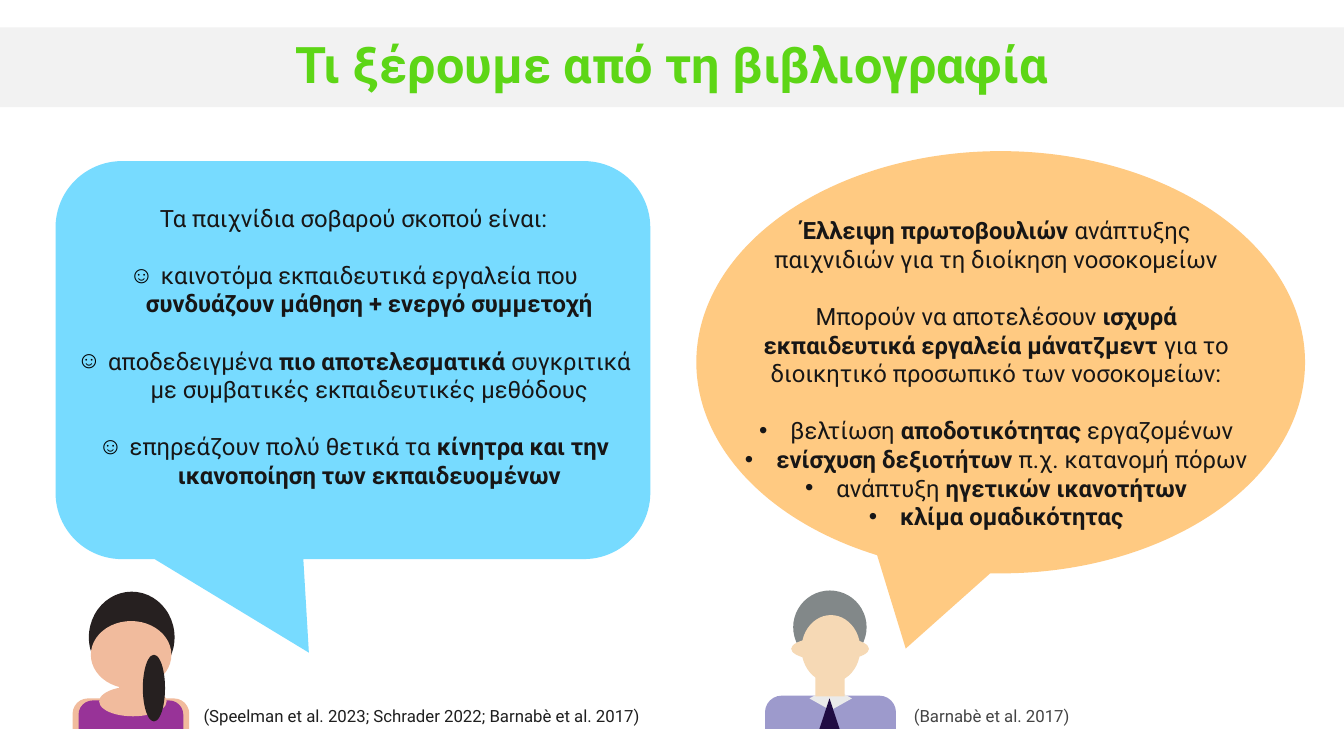
"""Build the slide on what the literature says about serious games."""
from lxml.etree import SubElement
from pptx import Presentation
from pptx.dml.color import RGBColor
from pptx.enum.shapes import MSO_SHAPE as Preset
from pptx.enum.text import MSO_ANCHOR as Anchor, MSO_AUTO_SIZE as AutoSize, PP_ALIGN as Align
from pptx.oxml.ns import qn
from pptx.util import Cm, Pt

FONT = "Roboto"
GREEN = RGBColor(0x5D, 0xD6, 0x16)
BAND = RGBColor(0xF2, 0xF2, 0xF2)
BLUE = RGBColor(0x37, 0xCA, 0xFF)
ORANGE = RGBColor(0xFF, 0xB1, 0x48)
INK = RGBColor(0x17, 0x16, 0x16)
BLACK = RGBColor(0, 0, 0)
DARK = RGBColor(0x1F, 0x1F, 0x1F)
GREY = RGBColor(0x44, 0x44, 0x44)
SKIN = RGBColor(0xF1, 0xBB, 0x9D)
PURPLE = RGBColor(0x98, 0x33, 0x98)
BLACK_HAIR = RGBColor(0x26, 0x20, 0x20)
SHIRT = RGBColor(0x9D, 0x9A, 0xCC)
PALE_SKIN = RGBColor(0xF6, 0xD9, 0xB5)
GREY_HAIR = RGBColor(0x82, 0x88, 0x89)
TIE = RGBColor(0x20, 0x0C, 0x43)
COLLAR = RGBColor(0xEA, 0xEA, 0xEA)

BODY_SIZE = 17
LINE_GAP = Pt(20.4)
BULLET_INDENT = Cm(0.79)

BENEFITS = [
    ("Τα παιχνίδια σοβαρού σκοπού είναι:", False, False),
    ("καινοτόμα εκπαιδευτικά εργαλεία που **συνδυάζουν μάθηση + ενεργό συμμετοχή", True, True),
    ("αποδεδειγμένα **πιο αποτελεσματικά **συγκριτικά με συμβατικές εκπαιδευτικές μεθόδους", True, True),
    ("επηρεάζουν πολύ θετικά τα **κίνητρα και την ικανοποίηση των εκπαιδευομένων", True, True),
]
NEEDS = [
    ("**Έλλειψη πρωτοβουλιών **ανάπτυξης", False, False),
    ("παιχνιδιών για τη διοίκηση νοσοκομείων", False, False),
    ("Μπορούν να αποτελέσουν **ισχυρά εκπαιδευτικά εργαλεία μάνατζμεντ **"
     "για το διοικητικό προσωπικό των νοσοκομείων:", False, True),
    ("βελτίωση **αποδοτικότητας** εργαζομένων", True, True),
    ("**ενίσχυση δεξιοτήτων **π.χ. κατανομή πόρων", True, False),
    ("ανάπτυξη **ηγετικών ικανοτήτων", True, False),
    ("**κλίμα ομαδικότητας", True, False),
]

WOMAN = [
    (Preset.OVAL, BLACK_HAIR, (2.24, 14.91, 2.16, 2.3)),
    (Preset.ROUND_2_SAME_RECTANGLE, SKIN, (1.83, 17.6, 2.94, 0.77)),
    (Preset.ROUND_2_SAME_RECTANGLE, PURPLE, (1.98, 17.65, 2.64, 0.72)),
    (Preset.OVAL, SKIN, (2.5, 17.3, 1.7, 0.75)),
    (Preset.RECTANGLE, SKIN, (3, 16.6, 0.6, 1)),
    (Preset.OVAL, SKIN, (2.29, 15.65, 2.03, 1.7)),
    (Preset.OVAL, BLACK_HAIR, (3.6, 16.5, 0.56, 1.68)),
]
MAN = [
    (Preset.OVAL, GREY_HAIR, (19.99, 14.88, 1.85, 1.85)),
    (Preset.OVAL, PALE_SKIN, (19.94, 16.05, 1.96, 0.6)),
    (Preset.ROUND_2_SAME_RECTANGLE, SHIRT, (19.28, 17.53, 3.3, 0.84)),
    (Preset.DIAMOND, COLLAR, (20.4, 17.3, 1.07, 0.6)),
    (Preset.RECTANGLE, PALE_SKIN, (20.55, 16.8, 0.74, 0.75)),
    (Preset.OVAL, PALE_SKIN, (20.2, 15.5, 1.48, 1.7)),
    (Preset.ISOSCELES_TRIANGLE, TIE, (20.65, 17.6, 0.51, 0.77)),
]


def place(shape, left, top, width, height):
    """Set the position and size of a shape in centimetres."""
    shape.left, shape.top, shape.width, shape.height = (
        Cm(value) for value in (left, top, width, height))


def paint(shape, color):
    """Give a shape a plain fill without line or shadow."""
    shape.fill.solid()
    shape.fill.fore_color.rgb = color
    shape.line.fill.background()
    shape.shadow.inherit = False


def format_run(run, size, color, bold=False):
    """Set the font of a run."""
    run.font.name, run.font.size, run.font.bold = FONT, Pt(size), bold
    run.font.color.rgb = color


def add_preset(slide, preset, color, box):
    """Add a plain filled preset shape."""
    shape = slide.shapes.add_shape(preset, *(Cm(value) for value in box))
    paint(shape, color)
    return shape


def add_callout(slide, preset, color, box, adjustments):
    """Add a translucent speech bubble."""
    shape = add_preset(slide, preset, color, box)
    for index, value in enumerate(adjustments):
        shape.adjustments[index] = value
    color_element = shape._element.spPr.find(qn("a:solidFill"))[0]
    SubElement(color_element, qn("a:alpha"), val="68000")


def add_figure(slide, parts):
    """Draw a person from simple shapes."""
    for preset, color, box in parts:
        shape = add_preset(slide, preset, color, box)
        if preset == Preset.ROUND_2_SAME_RECTANGLE:
            shape.adjustments[0] = 0.5


def set_bullet(paragraph, symbol, color):
    """Set or remove the bullet of a paragraph."""
    properties = paragraph._p.get_or_add_pPr()
    indent = BULLET_INDENT if symbol else 0
    properties.set("marL", str(int(indent)))
    properties.set("indent", str(int(-indent)))
    if symbol:
        bullet_color = SubElement(properties, qn("a:buClr"))
        SubElement(bullet_color, qn("a:srgbClr"), val=str(color))
        SubElement(properties, qn("a:buChar"), char=symbol)
    else:
        SubElement(properties, qn("a:buNone"))


def fill_list(slide, placeholder, box, items, symbol, bullet_color):
    """Write a centred list in a body placeholder in front of its bubble."""
    place(placeholder, *box)
    slide.shapes._spTree.append(placeholder._element)
    frame = placeholder.text_frame
    frame.auto_size = AutoSize.NONE
    for index, (text, bulleted, spaced) in enumerate(items):
        paragraph = frame.add_paragraph() if index else frame.paragraphs[0]
        paragraph.alignment = Align.CENTER
        paragraph.space_before = LINE_GAP if spaced else Pt(0)
        set_bullet(paragraph, symbol if bulleted else None, bullet_color)
        for position, part in enumerate(text.split("**")):
            if part:
                run = paragraph.add_run()
                run.text = part
                format_run(run, BODY_SIZE, INK, position % 2 == 1)


def fill_title(title, text):
    """Write the title on its grey band."""
    place(title, 0, 0.69, 33.87, 2.01)
    paint(title, BAND)
    frame = title.text_frame
    frame.text = text
    frame.auto_size = AutoSize.NONE
    frame.vertical_anchor = Anchor.MIDDLE
    paragraph = frame.paragraphs[0]
    paragraph.alignment = Align.CENTER
    paragraph.line_spacing = 0.9
    format_run(paragraph.runs[0], 36, GREEN, True)


def add_reference(slide, left, width, text, color):
    """Add a citation at the foot of the slide."""
    box = slide.shapes.add_textbox(Cm(left), Cm(17.65), Cm(width), Cm(0.76))
    box.text_frame.word_wrap = True
    box.text_frame.text = text
    format_run(box.text_frame.paragraphs[0].runs[0], 12, color)


def main():
    """Build and save the presentation."""
    presentation = Presentation()
    presentation.slide_width, presentation.slide_height = Cm(33.87), Cm(19.05)
    slide = presentation.slides.add_slide(presentation.slide_layouts[3])
    title, benefits, needs = slide.placeholders
    fill_title(title, "Τι ξέρουμε από τη βιβλιογραφία")
    add_callout(slide, Preset.ROUNDED_RECTANGULAR_CALLOUT, BLUE, (1.4, 4.06, 14.99, 10.03),
                (-0.074, 0.735, 0.167))
    add_callout(slide, Preset.OVAL_CALLOUT, ORANGE, (17.55, 3.81, 15.34, 10.64), (-0.156, 0.678))
    add_figure(slide, WOMAN)
    add_figure(slide, MAN)
    fill_list(slide, benefits, (1.55, 5, 14.73, 7.52), BENEFITS, "☺", BLACK)
    fill_list(slide, needs, (18.49, 5.32, 13.23, 8.25), NEEDS, "•", INK)
    add_reference(slide, 4.88, 12.12, "(Speelman et al. 2023; Schrader 2022; Barnabè et al. 2017)", DARK)
    add_reference(slide, 22.78, 8.94, "(Barnabè et al. 2017)", GREY)
    presentation.save("out.pptx")


if __name__ == "__main__":
    main()
